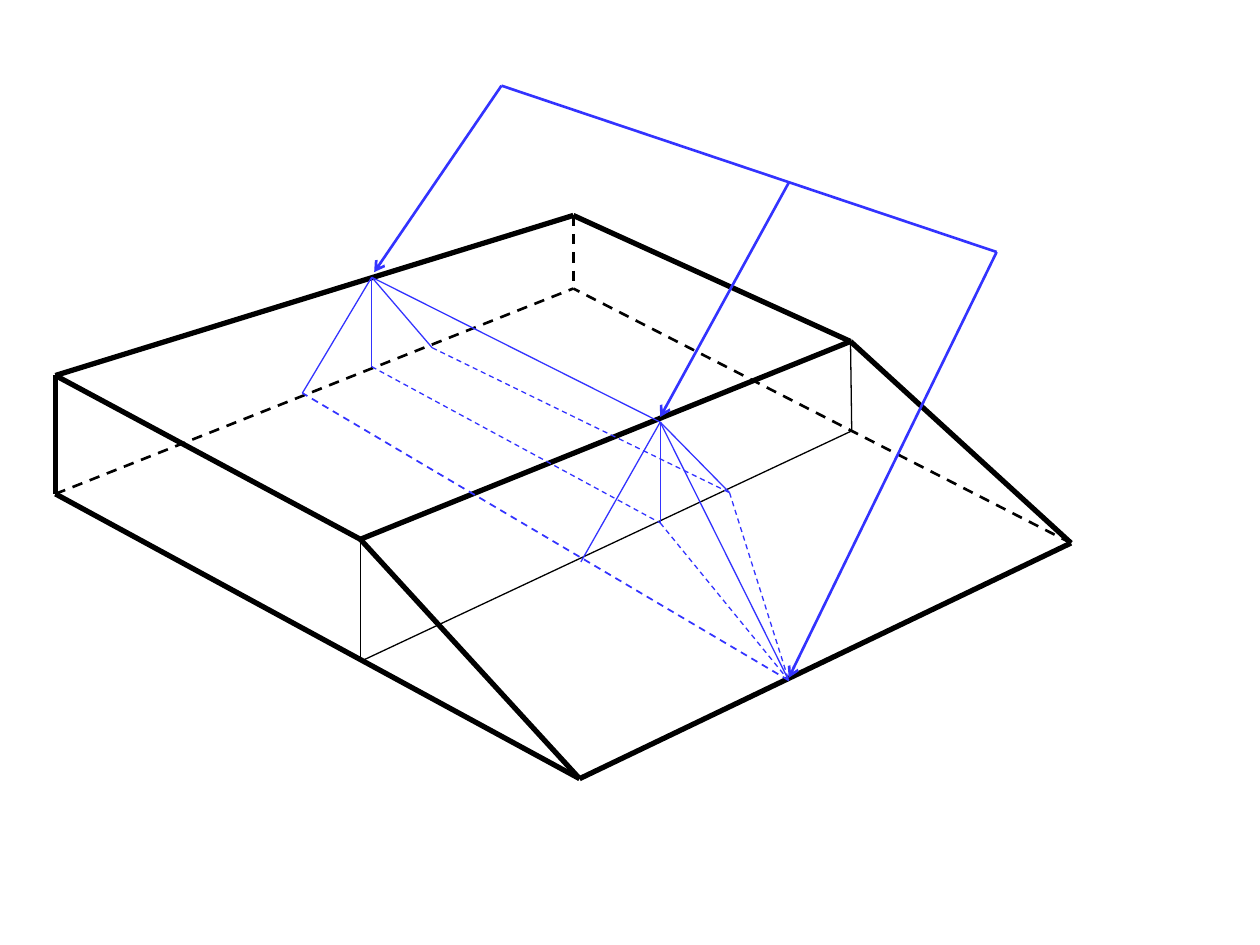
"""Draw a ramped block with blue section lines and three arrows from a bar."""
from pptx import Presentation
from pptx.dml.color import RGBColor as Rgb
from pptx.enum.dml import MSO_LINE as Dash
from pptx.enum.shapes import MSO_CONNECTOR as Link
from pptx.util import Inches, Pt
from lxml.etree import SubElement
from pptx.oxml.ns import qn

THEME = {
    "black": Rgb.from_string("000000"),
    "blue": Rgb.from_string("3333FF"),
    "thick": Pt(3),
    "mid": Pt(1.5),
    "thin": Pt(1),
    "hair": Pt(0.75),
}
COLS, ROWS = 100, 75

deck = Presentation()
deck.slide_width, deck.slide_height = Inches(10), Inches(7.5)
col, row = deck.slide_width / COLS, deck.slide_height / ROWS
slide = deck.slides.add_slide(deck.slide_layouts[6])

# name: (column, row)
spots = {
    "west top": (4.4, 29.8), "west base": (4.4, 39.2),
    "north top": (45.5, 17.1), "north base": (45.5, 22.9),
    "south top": (28.6, 42.8), "south base": (28.6, 52.5),
    "east top": (67.5, 27.1), "east base": (67.6, 34.2),
    "ramp south": (46, 61.8), "ramp east": (85, 43.1),
    "back peak": (29.5, 22), "back foot": (29.5, 29.1),
    "back left": (24, 31.2), "back right": (34.3, 27.6),
    "front peak": (52.4, 33.5), "front foot": (52.4, 41.5),
    "front left": (46.1, 44.6), "front right": (57.9, 39.1),
    "toe": (62.6, 54),
    "bar west": (39.8, 6.8), "bar mid": (62.6, 14.5), "bar east": (79.1, 20),
    "back tip": (29.7, 21.6), "front tip": (52.4, 33.1), "toe tip": (62.6, 53.8),
}

# (colour, width, dashed, arrow, pairs of spots)
groups = [
    ("black", "thick", False, False, [
        ("ramp south", "west base"), ("ramp south", "ramp east"),
        ("south top", "west top"), ("east top", "north top"),
        ("west top", "north top"), ("south top", "east top"),
        ("south top", "ramp south"), ("east top", "ramp east"),
        ("west top", "west base")]),
    ("black", "mid", True, False, [
        ("north top", "north base"), ("west base", "north base"),
        ("ramp east", "north base")]),
    ("blue", "thin", True, False, [("toe", "back left")]),
    ("black", "hair", False, False, [
        ("south top", "south base"), ("south base", "east base"),
        ("east top", "east base")]),
    ("blue", "hair", False, False, [
        ("back peak", "back foot"), ("back peak", "back left"),
        ("back peak", "back right"), ("back peak", "front peak"),
        ("front peak", "front foot"), ("front left", "front peak"),
        ("front peak", "front right"), ("front peak", "toe")]),
    ("blue", "hair", True, False, [
        ("back foot", "front foot"), ("back right", "front right"),
        ("front right", "toe"), ("front foot", "toe")]),
    ("blue", "mid", False, True, [
        ("bar west", "back tip"), ("bar mid", "front tip"),
        ("bar east", "toe tip")]),
    ("blue", "mid", False, False, [("bar west", "bar east")]),
]

for hue, width, dashed, arrow, pairs in groups:
    for start, end in pairs:
        (x1, y1), (x2, y2) = spots[start], spots[end]
        edge = slide.shapes.add_connector(
            Link.STRAIGHT, round(x1 * col), round(y1 * row),
            round(x2 * col), round(y2 * row))
        edge.line.color.rgb = THEME[hue]
        edge.line.width = THEME[width]
        if dashed:
            edge.line.dash_style = Dash.DASH
        props = edge._element.spPr
        if arrow:
            SubElement(props.find(qn("a:ln")), qn("a:tailEnd"), type="arrow")
        SubElement(props, qn("a:effectLst"))

deck.save("out.pptx")
